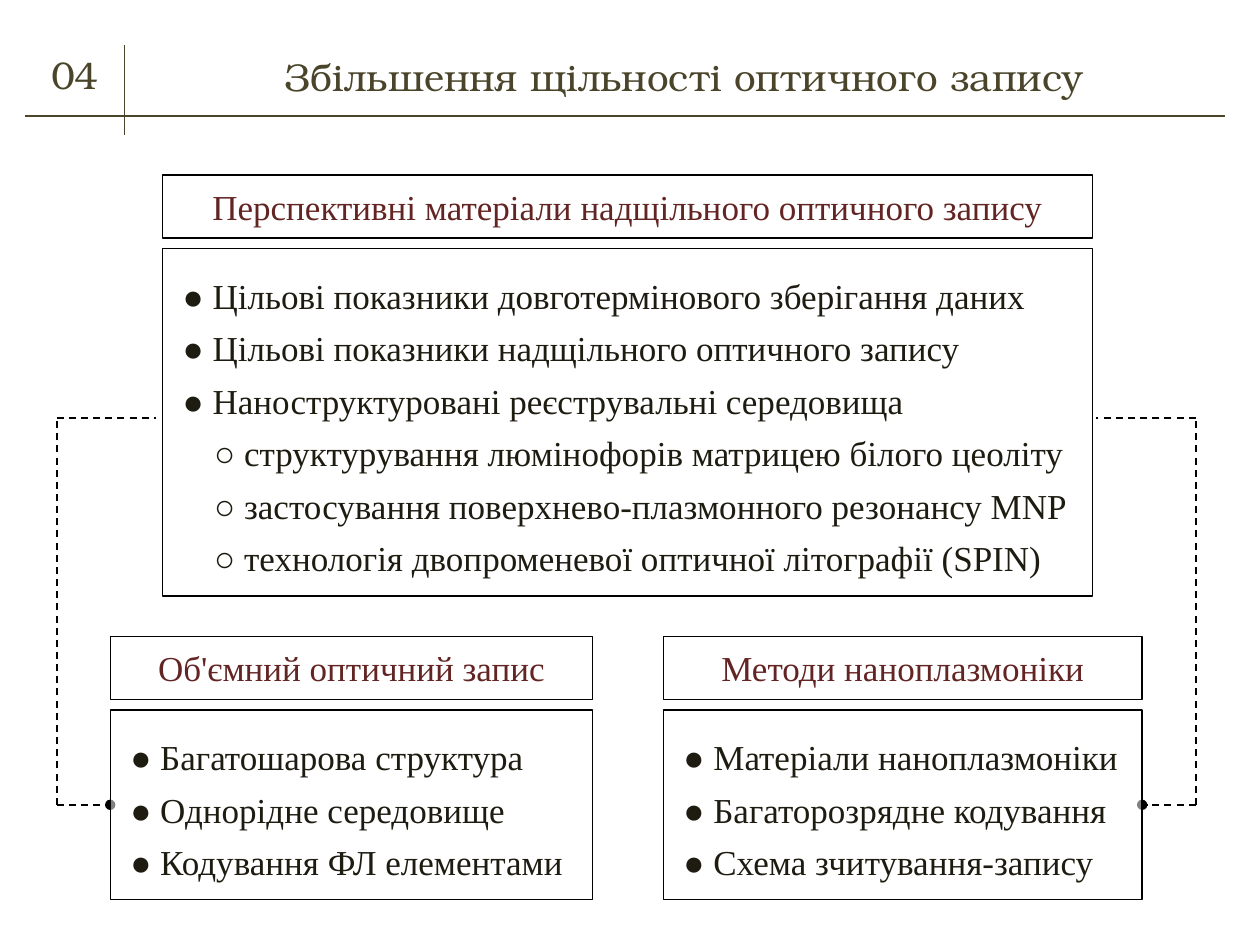
import pptx
import pptx.dml.color
import pptx.enum.dml
import pptx.enum.shapes
import pptx.enum.text
import pptx.util
from lxml import etree
from pptx.oxml.ns import qn

COLUMNS, ROWS = 100, 75
CELL = pptx.util.Inches(0.1)
OLIVE, MAROON, INK, BLACK, WHITE = "4A452A", "632523", "1E1C11", "000000", "FFFFFF"
LEFT, CENTER = pptx.enum.text.PP_ALIGN.LEFT, pptx.enum.text.PP_ALIGN.CENTER
HEADING = {"name": "TeX Gyre Bonum", "size": pptx.util.Pt(22)}
BODY = {"name": "Times New Roman", "size": pptx.util.Pt(20)}
HEADER_HEIGHT, HEADER_GAP = 5, 0.85

# Boxes are (left, top, width, height) in grid columns and rows.
TITLE_BAR = (2, 3.6, 95.2, 5.6)
PANELS = {
    "materials": (12.9, 13.9, 73.8, 33.4),
    "volume": (8.75, 50.5, 38.3, 20.9),
    "plasmonics": (52.65, 50.5, 38, 20.9),
}
CONTENT = {
    "materials": ("Перспективні матеріали надщільного оптичного запису", [
        "● Цільові показники довготермінового зберігання даних",
        "● Цільові показники надщільного оптичного запису",
        "● Наноструктуровані реєструвальні середовища",
        "○ структурування люмінофорів матрицею білого цеоліту",
        "○ застосування поверхнево-плазмонного резонансу MNP",
        "○ технологія двопроменевої оптичної літографії (SPIN)"]),
    "volume": ("Об'ємний оптичний запис", [
        "● Багатошарова структура",
        "● Однорідне середовище",
        "● Кодування ФЛ елементами"]),
    "plasmonics": ("Методи наноплазмоніки", [
        "● Матеріали наноплазмоніки",
        "● Багаторозрядне кодування",
        "● Схема зчитування-запису"]),
}


def color(hex_value):
    return pptx.dml.color.RGBColor.from_string(hex_value)


def cells(*lengths):
    return [round(length * CELL) for length in lengths]


def apply(target, values):
    for name, value in values.items():
        setattr(target, name, value)


def write(shape, lines, font, hex_value, alignment, margins, line_spacing=None):
    """Fill a shape with paragraphs; margins are left, top, right, bottom in cells."""
    frame = shape.text_frame
    sides = ("margin_left", "margin_top", "margin_right", "margin_bottom")
    apply(frame, dict(zip(sides, cells(*margins))))
    apply(frame, {"word_wrap": True,
                  "vertical_anchor": pptx.enum.text.MSO_ANCHOR.TOP,
                  "auto_size": pptx.enum.text.MSO_AUTO_SIZE.SHAPE_TO_FIT_TEXT})
    frame.text = "\n".join(lines)
    for paragraph in frame.paragraphs:
        apply(paragraph, {"alignment": alignment, "line_spacing": line_spacing})
        if paragraph.text.startswith("○"):
            paragraph_format = paragraph.runs[0]._r.getparent().get_or_add_pPr()
            paragraph_format.set("marL", "0")
            paragraph_format.set("indent", str(cells(2.5)[0]))
        apply(paragraph.font, font)
        paragraph.font.color.rgb = color(hex_value)


def add_line(slide, start, end, hex_value, width, dashed=False):
    connector = slide.shapes.add_connector(
        pptx.enum.shapes.MSO_CONNECTOR.STRAIGHT, *cells(*start, *end))
    connector.line.color.rgb = color(hex_value)
    connector.line.width = pptx.util.Pt(width)
    if dashed:
        connector.line.dash_style = pptx.enum.dml.MSO_LINE.DASH
    etree.SubElement(connector._element.spPr, qn("a:effectLst"))
    return connector


def add_rectangle(slide, box):
    rectangle = slide.shapes.add_shape(
        pptx.enum.shapes.MSO_SHAPE.RECTANGLE, *cells(*box))
    rectangle.shadow.inherit = False
    rectangle.fill.solid()
    rectangle.fill.fore_color.rgb = color(WHITE)
    fill_color = rectangle._element.spPr.find(qn("a:solidFill"))[0]
    etree.SubElement(fill_color, qn("a:alpha"), val="50000")
    rectangle.line.color.rgb = color(BLACK)
    rectangle.line.width = pptx.util.Pt(0.75)
    return rectangle


def add_title_bar(slide, box, number, title):
    left, top, width, height = box
    divider = left + 7.9
    add_line(slide, (left, top + height), (left + width, top + height), OLIVE, 0.75)
    add_line(slide, (divider, top + 7.1), (divider, top), OLIVE, 0.75)
    title_left = divider + 1.5
    title_box = (title_left, top + 0.1, left + width - title_left, 4.7)
    placeholder = slide.shapes.title
    apply(placeholder, dict(zip(("left", "top", "width", "height"), cells(*title_box))))
    number_box = slide.shapes.add_textbox(*cells(left + 0.8, top, 6.3, 4.7))
    for shape, text in ((placeholder, title), (number_box, number)):
        write(shape, [text], HEADING, OLIVE, CENTER, (1, 0.5, 1, 0.5))


def add_panel(slide, box, header, items):
    """Stack a header on a list and return the list rectangle."""
    left, top, width, height = box
    body_offset = HEADER_HEIGHT + HEADER_GAP
    header_shape = add_rectangle(slide, (left, top, width, HEADER_HEIGHT))
    write(header_shape, [header], BODY, MAROON, CENTER, (0.4, 0.8, 0.4, 0.8))
    body = add_rectangle(slide, (left, top + body_offset, width, height - body_offset))
    write(body, items, BODY, INK, LEFT, (1.6, 1.2, 0.4, 1.2), 1.25)
    return body


def add_bracket(slide, target, site, outer, top, inner):
    """Run a dashed bracket behind the panels, ending in a dot on the target's side."""
    edge = (target.left + (target.width if site == 3 else 0)) / CELL
    middle = (target.top + target.height / 2) / CELL
    corner = (outer, middle)
    ends = [(edge, middle), (outer, top)]
    foot, upright = [add_line(slide, corner, end, BLACK, 1, True) for end in ends]
    arm = add_line(slide, (outer, top), (inner, top), BLACK, 1, True)
    foot.end_connect(target, site)
    etree.SubElement(foot.line._get_or_add_ln(), qn("a:tailEnd"), type="oval")
    for connector in (arm, upright, foot):
        slide.shapes._spTree.insert(2, connector._element)


def main():
    presentation = pptx.Presentation()
    presentation.slide_width, presentation.slide_height = cells(COLUMNS, ROWS)
    slide = presentation.slides.add_slide(presentation.slide_layouts[5])
    add_title_bar(slide, TITLE_BAR, "04", "Збільшення щільності оптичного запису")
    bodies = {name: add_panel(slide, PANELS[name], *CONTENT[name])
              for name in ("volume", "plasmonics", "materials")}
    add_bracket(slide, bodies["volume"], 1, outer=4.5, top=33.2, inner=12.4)
    add_bracket(slide, bodies["plasmonics"], 3, outer=94.9, top=33.2, inner=87)
    presentation.save("out.pptx")


if __name__ == "__main__":
    main()
